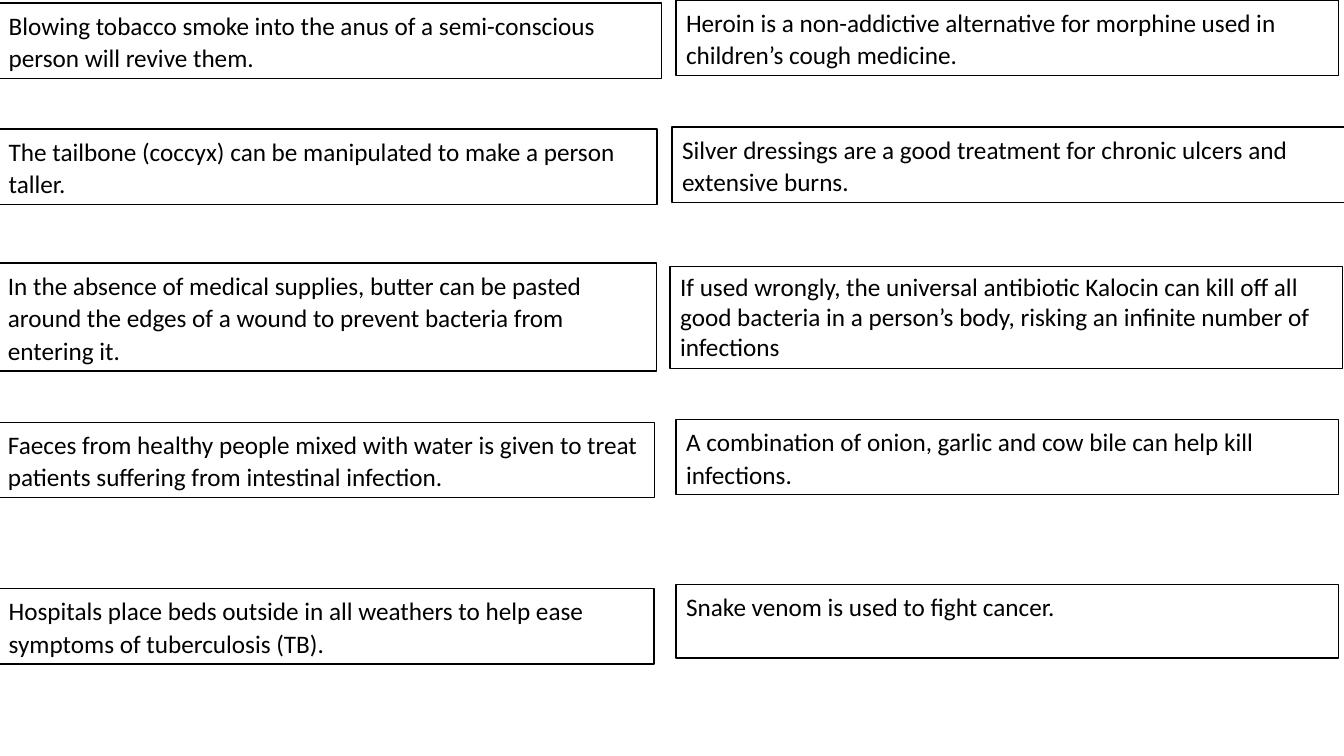
from dataclasses import dataclass

from pptx import Presentation
from pptx.dml.color import RGBColor
from pptx.enum.shapes import MSO_SHAPE
from pptx.enum.text import MSO_ANCHOR, MSO_AUTO_SIZE, PP_ALIGN
from pptx.util import Cm, Pt

INK = "000000"
PAPER = "FFFFFF"


@dataclass
class Claim:
    """One boxed statement; shift and drop are cm from its column's corner."""
    text: str
    drop: float
    width: float
    shift: float = 0
    height: float = 1.9
    spacing: float = 1.07
    after: float = 0


LEFT_CLAIMS = [
    Claim("Blowing tobacco smoke into the anus of a semi-conscious person will revive them.",
          drop=0.08, width=16.71),
    Claim("The tailbone (coccyx) can be manipulated to make a person taller.",
          drop=3.25, width=16.59, after=8),
    Claim("In the absence of medical supplies, butter can be pasted around the edges "
          "of a wound to prevent bacteria from entering it.",
          drop=6.63, width=16.59, shift=-0.02, height=2.72, after=8),
    Claim("Faeces from healthy people mixed with water is given to treat patients "
          "suffering from intestinal infection.",
          drop=10.64, width=16.54, shift=-0.02),
    Claim("Hospitals place beds outside in all weathers to help ease symptoms of "
          "tuberculosis (TB).",
          drop=14.83, width=16.51),
]

RIGHT_CLAIMS = [
    Claim("Heroin is a non-addictive alternative for morphine used in children’s cough medicine.",
          drop=0, width=16.7),
    Claim("Silver dressings are a good treatment for chronic ulcers and extensive burns.",
          drop=3.2, width=16.94, shift=-0.1, after=8),
    Claim("If used wrongly, the universal antibiotic Kalocin can kill off all good "
          "bacteria in a person’s body, risking an infinite number of infections",
          drop=6.71, width=16.94, shift=-0.15, height=2.57, spacing=1),
    Claim("A combination of onion, garlic and cow bile can help kill infections.",
          drop=10.57, width=16.7),
    Claim("Snake venom is used to fight cancer.",
          drop=14.73, width=16.7, height=1.85),
]


def color(value):
    return RGBColor.from_string(value)


def add_claim(page, left, top, claim):
    box = page.shapes.add_shape(MSO_SHAPE.RECTANGLE, Cm(left), Cm(top),
                                Cm(claim.width), Cm(claim.height))
    box.shadow.inherit = False
    box.fill.solid()
    box.fill.fore_color.rgb = color(PAPER)
    box.line.color.rgb = color(INK)
    box.line.width = Pt(1)

    frame = box.text_frame
    frame.word_wrap = True
    frame.auto_size = MSO_AUTO_SIZE.SHAPE_TO_FIT_TEXT
    frame.vertical_anchor = MSO_ANCHOR.TOP
    para = frame.paragraphs[0]
    para.alignment = PP_ALIGN.LEFT
    para.line_spacing = claim.spacing
    para.space_after = Pt(claim.after)
    span = para.add_run()
    span.text = claim.text
    span.font.name = "Calibri"
    span.font.size = Pt(18)
    span.font.color.rgb = color(INK)


def add_column(page, left, top, claims):
    for claim in claims:
        add_claim(page, left + claim.shift, top + claim.drop, claim)


def main():
    deck = Presentation()
    deck.slide_width = Cm(33.87)
    deck.slide_height = Cm(19.05)
    page = deck.slides.add_slide(deck.slide_layouts[6])
    add_column(page, -0.03, 0, LEFT_CLAIMS)
    add_column(page, 17.04, 0, RIGHT_CLAIMS)
    deck.save("out.pptx")


if __name__ == "__main__":
    main()
